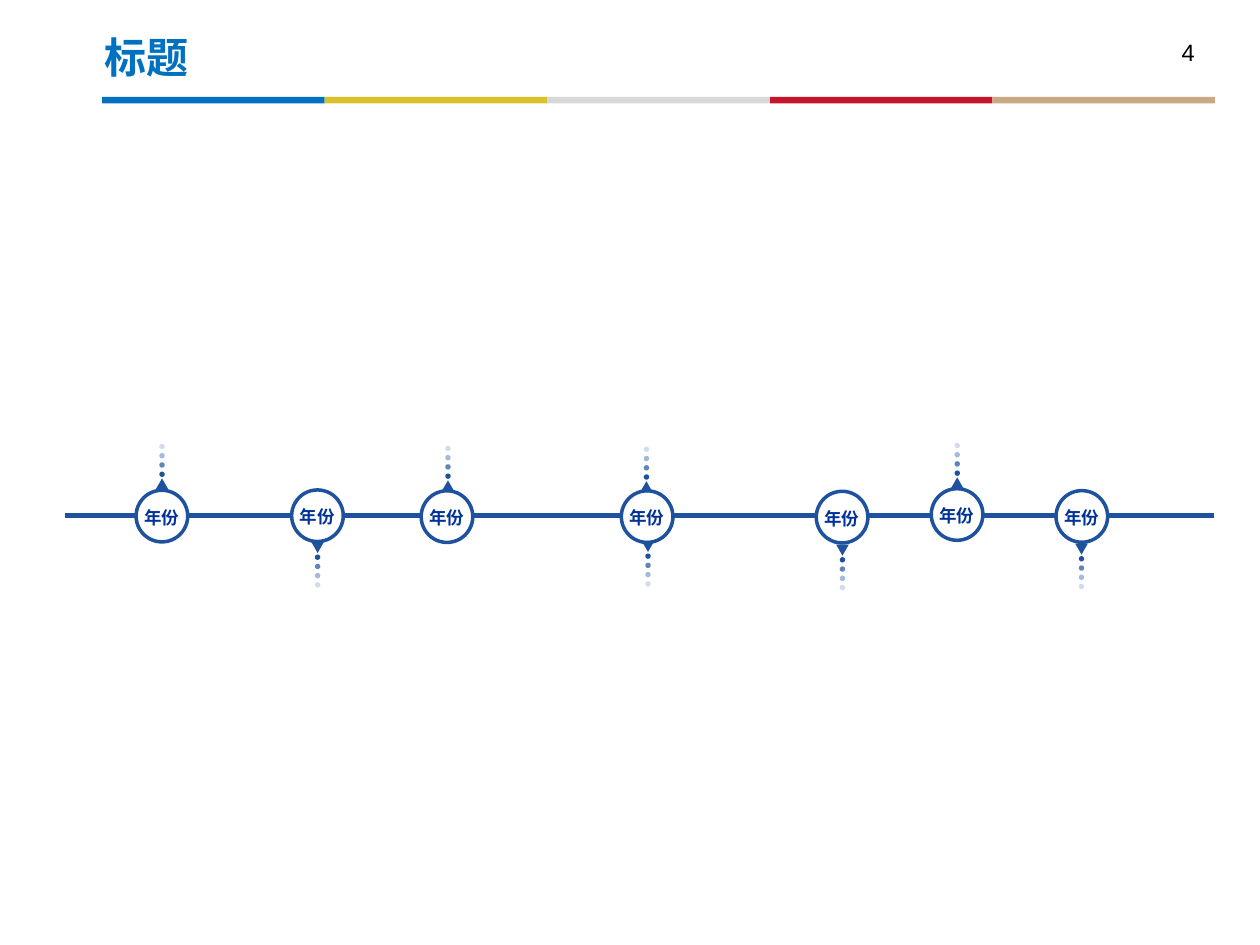
from lxml import etree
from pptx import Presentation
from pptx.dml.color import RGBColor
from pptx.enum.shapes import MSO_CONNECTOR, MSO_SHAPE
from pptx.enum.text import MSO_ANCHOR, MSO_AUTO_SIZE, PP_ALIGN
from pptx.oxml.ns import qn
from pptx.util import Pt

COLORS = {
    "blue": "0070C0", "gold": "DCC12A", "gray": "D8D8D8", "red": "C51729",
    "tan": "CAA884", "axis": "1E529E", "label": "003399",
    "white": "FFFFFF", "black": "000000",
}
LATIN, CJK = "Arial", "Noto Sans CJK SC"

TITLE, PAGE = "标题", "4"
BAR_COLORS = ["blue", "gold", "gray", "red", "tan"]
# Milestones: label, centre x, centre y
MILESTONES = [
    ("年份", 92.5, 294.9),
    ("年份", 181.4, 294.7),
    ("年份", 255.4, 295.2),
    ("年份", 369.8, 295.2),
    ("年份", 481.2, 295.5),
    ("年份", 546.9, 294),
    ("年份", 618.2, 295.1),
]
# Pointers: tip x, tip y, direction (-1 up, 1 down)
POINTERS = [
    (92.6, 273.4, -1), (256, 274.5, -1), (369.4, 275, -1), (547, 272.8, -1),
    (181.5, 316, 1), (370.3, 315.4, 1), (481.4, 317.5, 1), (618, 316.9, 1),
]
DOT_ALPHAS = [100, 70, 40, 20]

BAR_X, BAR_Y, BAR_W, BAR_H = 58.3, 55.4, 127.2, 3.7
AXIS_X1, AXIS_X2, AXIS_Y = 37.2, 693.6, 294.8
CIRCLE, LABEL_W, LABEL_H = 29.5, 34.5, 19.4
DOT, DOT_GAP, DOT_STEP = 3.1, 2.4, 5.28
TIP_W, TIP_H = 7.2, 6.3


def rgb(name):
    return RGBColor.from_string(COLORS[name])


def put_text(sp, text, size, color, font=LATIN, bold=False, align=PP_ALIGN.LEFT,
             anchor=MSO_ANCHOR.TOP, wrap=True, auto=MSO_AUTO_SIZE.NONE, spacing=None):
    tf = sp.text_frame
    tf.word_wrap, tf.auto_size, tf.vertical_anchor = wrap, auto, anchor
    p = tf.paragraphs[0]
    p.alignment = align
    if spacing:
        p.line_spacing = spacing
    r = p.add_run()
    r.text = text
    r.font.size, r.font.bold, r.font.name = Pt(size), bold, font
    r.font.color.rgb = rgb(color)
    etree.SubElement(r.font._element, qn("a:ea")).set("typeface", CJK)


def add_shape(shapes, kind, x, y, w, h, fill, line=None, alpha=100):
    """Add a flat shape; alpha is the opacity of its fill in percent."""
    sp = shapes.add_shape(kind, Pt(x), Pt(y), Pt(w), Pt(h))
    sp.shadow.inherit = False
    sp.fill.solid()
    sp.fill.fore_color.rgb = rgb(fill)
    if alpha < 100:
        clr = sp._element.spPr.find(f"{qn('a:solidFill')}/{qn('a:srgbClr')}")
        etree.SubElement(clr, qn("a:alpha")).set("val", str(alpha * 1000))
    if line:
        sp.line.color.rgb = rgb(line)
        sp.line.width = Pt(2)
    else:
        sp.line.fill.background()
    return sp


def add_axis(s):
    line = s.shapes.add_connector(MSO_CONNECTOR.STRAIGHT, Pt(AXIS_X1), Pt(AXIS_Y),
                                  Pt(AXIS_X2), Pt(AXIS_Y))
    line.line.color.rgb = rgb("axis")
    line.line.width = Pt(3)
    etree.SubElement(line._element.spPr, qn("a:effectLst"))


def add_milestone(s, text, cx, cy):
    add_shape(s.shapes, MSO_SHAPE.OVAL, cx - CIRCLE / 2, cy - CIRCLE / 2,
              CIRCLE, CIRCLE, "white", line="axis")
    label = s.shapes.add_textbox(Pt(cx - LABEL_W / 2), Pt(cy + 0.8 - LABEL_H / 2),
                                 Pt(LABEL_W), Pt(LABEL_H))
    put_text(label, text, 10, "label", bold=True, wrap=False,
             auto=MSO_AUTO_SIZE.SHAPE_TO_FIT_TEXT)


def add_pointer(s, x, tip, way):
    """Draw a triangle and a trail of dots fading away from its tip."""
    shapes = s.shapes.add_group_shape().shapes
    for i, alpha in enumerate(DOT_ALPHAS):
        cy = tip + way * (DOT_GAP + i * DOT_STEP)
        add_shape(shapes, MSO_SHAPE.OVAL, x - DOT / 2, cy - DOT / 2, DOT, DOT,
                  "axis", alpha=alpha)
    top = tip if way < 0 else tip - TIP_H
    arrow = add_shape(shapes, MSO_SHAPE.ISOSCELES_TRIANGLE, x - TIP_W / 2, top,
                      TIP_W, TIP_H, "axis")
    arrow.rotation = 180 if way > 0 else 0


def main():
    prs = Presentation()
    prs.slide_width, prs.slide_height = Pt(720), Pt(540)
    s = prs.slides.add_slide(prs.slide_layouts[5])

    bars = s.shapes.add_group_shape().shapes
    for i, color in enumerate(BAR_COLORS):
        add_shape(bars, MSO_SHAPE.RECTANGLE, BAR_X + i * BAR_W, BAR_Y,
                  BAR_W, BAR_H, color)

    page = s.shapes.add_textbox(Pt(668.2), Pt(18), Pt(38.9), Pt(32.4))
    put_text(page, PAGE, 13.5, "black")

    title = s.shapes.title
    title.left, title.top, title.width, title.height = Pt(52.6), Pt(19.4), Pt(641.5), Pt(30.2)
    put_text(title, TITLE, 24, "blue", font=CJK, bold=True,
             anchor=MSO_ANCHOR.MIDDLE, spacing=0.9)

    add_axis(s)
    for milestone in MILESTONES:
        add_milestone(s, *milestone)
    for pointer in POINTERS:
        add_pointer(s, *pointer)
    prs.save("out.pptx")


if __name__ == "__main__":
    main()
